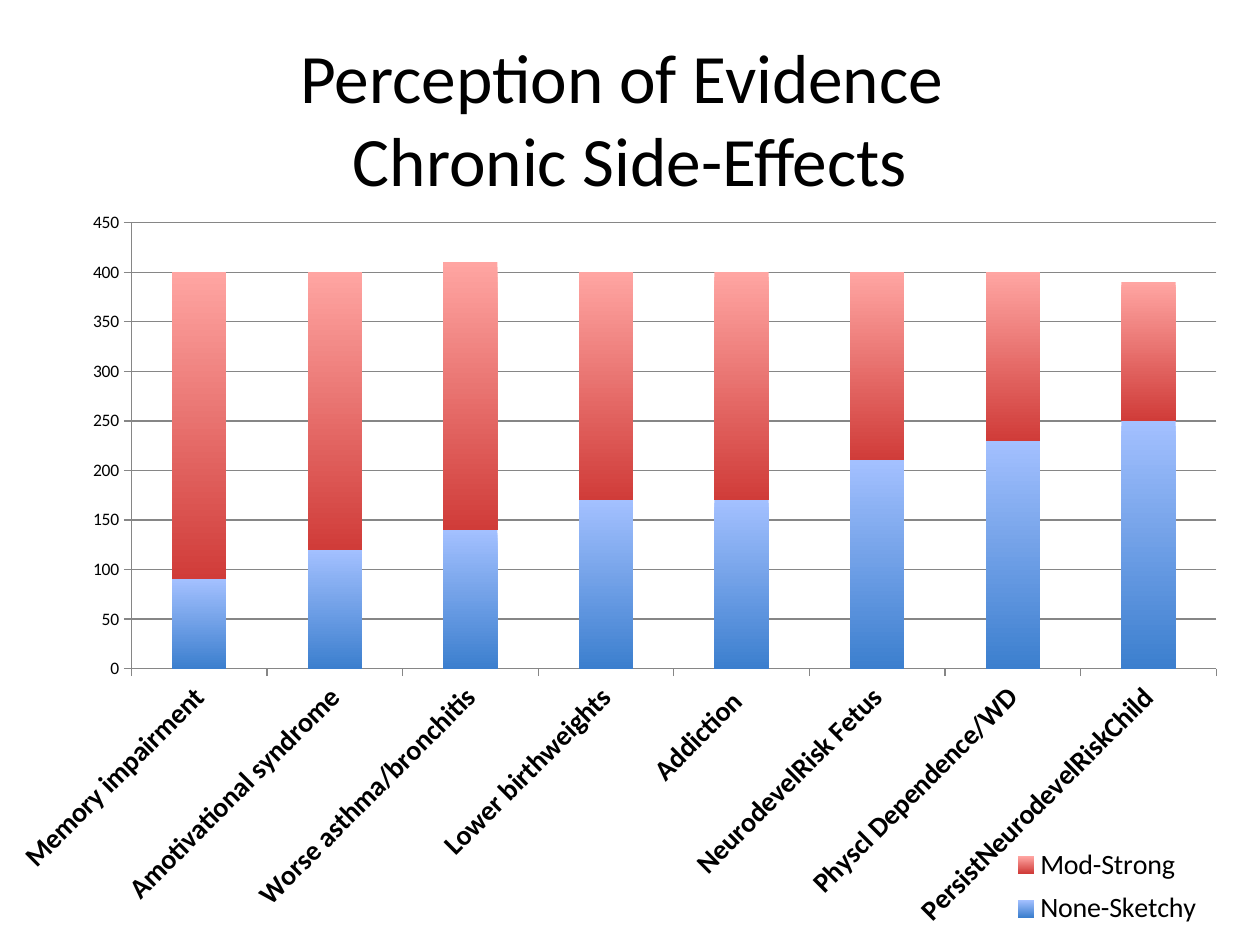
from lxml.etree import SubElement
from pptx import Presentation
from pptx.chart.data import CategoryChartData
from pptx.dml.color import RGBColor
from pptx.enum.chart import XL_CHART_TYPE, XL_LEGEND_POSITION, XL_TICK_MARK
from pptx.enum.text import MSO_ANCHOR, PP_ALIGN
from pptx.oxml.ns import qn
from pptx.util import Emu, Pt

BLACK = RGBColor(0x00, 0x00, 0x00)
GRAY = RGBColor(0x86, 0x86, 0x86)
LIGHT_BLUE = RGBColor(0xA3, 0xC0, 0xFF)
DEEP_BLUE = RGBColor(0x3C, 0x7F, 0xCE)
LIGHT_RED = RGBColor(0xFF, 0xA5, 0xA2)
DEEP_RED = RGBColor(0xD0, 0x3C, 0x39)

SIDE_EFFECTS = [
    "Memory impairment", "Amotivational syndrome", "Worse asthma/bronchitis",
    "Lower birthweights", "Addiction ", "NeurodevelRisk Fetus",
    "Physcl Dependence/WD", "PersistNeurodevelRiskChild",
]
RATINGS = [
    ("None-Sketchy", [90, 120, 140, 170, 170, 210, 230, 250], LIGHT_BLUE, DEEP_BLUE),
    ("Mod-Strong", [310, 280, 270, 230, 230, 190, 170, 140], LIGHT_RED, DEEP_RED),
]


def px(length):
    return Emu(round(length * 914400 / 126))


class SlideBuilder:
    """Holds the style and the current slide, and adds each kind of element."""

    font_name = "Calibri"

    def __init__(self, slide):
        self.slide = slide

    def style(self, font, size, bold=False):
        font.name = self.font_name
        font.size = Pt(size)
        font.bold = bold
        font.color.rgb = BLACK

    def heading(self, lines, left, top, width, height, size):
        frame = self.slide.shapes.add_textbox(
            px(left), px(top), px(width), px(height)).text_frame
        frame.word_wrap = True
        frame.vertical_anchor = MSO_ANCHOR.MIDDLE
        paragraph = frame.paragraphs[0]
        paragraph.alignment = PP_ALIGN.CENTER
        for index, line in enumerate(lines):
            if index:
                paragraph.add_line_break()
            run = paragraph.add_run()
            run.text = line
            self.style(run.font, size)

    def place(self, layout, left, top, width, height, inner=False):
        manual = SubElement(layout, qn("c:manualLayout"))
        settings = [("layoutTarget", "inner")] if inner else []
        settings += [("xMode", "edge"), ("yMode", "edge"),
                     ("x", left), ("y", top), ("w", width), ("h", height)]
        for tag, value in settings:
            SubElement(manual, qn(f"c:{tag}")).set("val", str(value))

    def axis(self, axis, size, bold=False):
        axis.major_tick_mark = XL_TICK_MARK.OUTSIDE
        axis.minor_tick_mark = XL_TICK_MARK.NONE
        axis.format.line.color.rgb = GRAY
        axis.format.line.width = Pt(0.75)
        self.style(axis.tick_labels.font, size, bold)

    def stacked_columns(self, categories, ratings, left, top, width, height):
        data = CategoryChartData()
        data.categories = categories
        for name, values, *_ in ratings:
            data.add_series(name, values)
        chart = self.slide.shapes.add_chart(
            XL_CHART_TYPE.COLUMN_STACKED, px(left), px(top), px(width), px(height), data).chart
        chart.has_title = False
        self.style(chart.font, 10)

        plot = chart.plots[0]
        plot.vary_by_categories = False
        plot.gap_width = 150
        plot.overlap = 100
        for series, (_, _, light, deep) in zip(plot.series, ratings):
            fill = series.format.fill
            fill.gradient()
            fill.gradient_angle = 270
            for stop, color in zip(fill.gradient_stops, (light, deep)):
                stop.color.rgb = color

        self.axis(chart.category_axis, 16, bold=True)
        self.axis(chart.value_axis, 10)
        chart.value_axis.minimum_scale = 0
        chart.value_axis.maximum_scale = 450
        chart.value_axis.major_unit = 50
        gridlines = chart.value_axis.major_gridlines.format.line
        gridlines.color.rgb = GRAY
        gridlines.width = Pt(0.75)

        chart.has_legend = True
        chart.legend.position = XL_LEGEND_POSITION.RIGHT
        chart.legend.include_in_layout = False
        self.style(chart.legend.font, 16)

        space = chart._chartSpace
        space.xpath(".//c:catAx/c:txPr/a:bodyPr")[0].set("rot", "-2700000")
        plot_area = space.xpath(".//c:plotArea")[0]
        legend = space.xpath(".//c:legend")[0]
        for parent, index in ((plot_area, 0), (legend, 1)):
            for layout in parent.findall(qn("c:layout")):
                parent.remove(layout)
            parent.insert(index, parent.makeelement(qn("c:layout")))
        self.place(plot_area[0], 0.108, 0.034, 0.892, 0.548, inner=True)
        self.place(legend[1], 0.83, 0.79, 0.16, 0.12)


def main():
    deck = Presentation()
    deck.slide_width, deck.slide_height = px(1260), px(945)
    builder = SlideBuilder(deck.slides.add_slide(deck.slide_layouts[6]))
    builder.heading(["Perception of Evidence ", "Chronic Side-Effects"],
                    63, 38, 1134, 158, 39.6)
    builder.stacked_columns(SIDE_EFFECTS, RATINGS, 0, 195, 1217, 814)
    deck.save("out.pptx")


if __name__ == "__main__":
    main()
